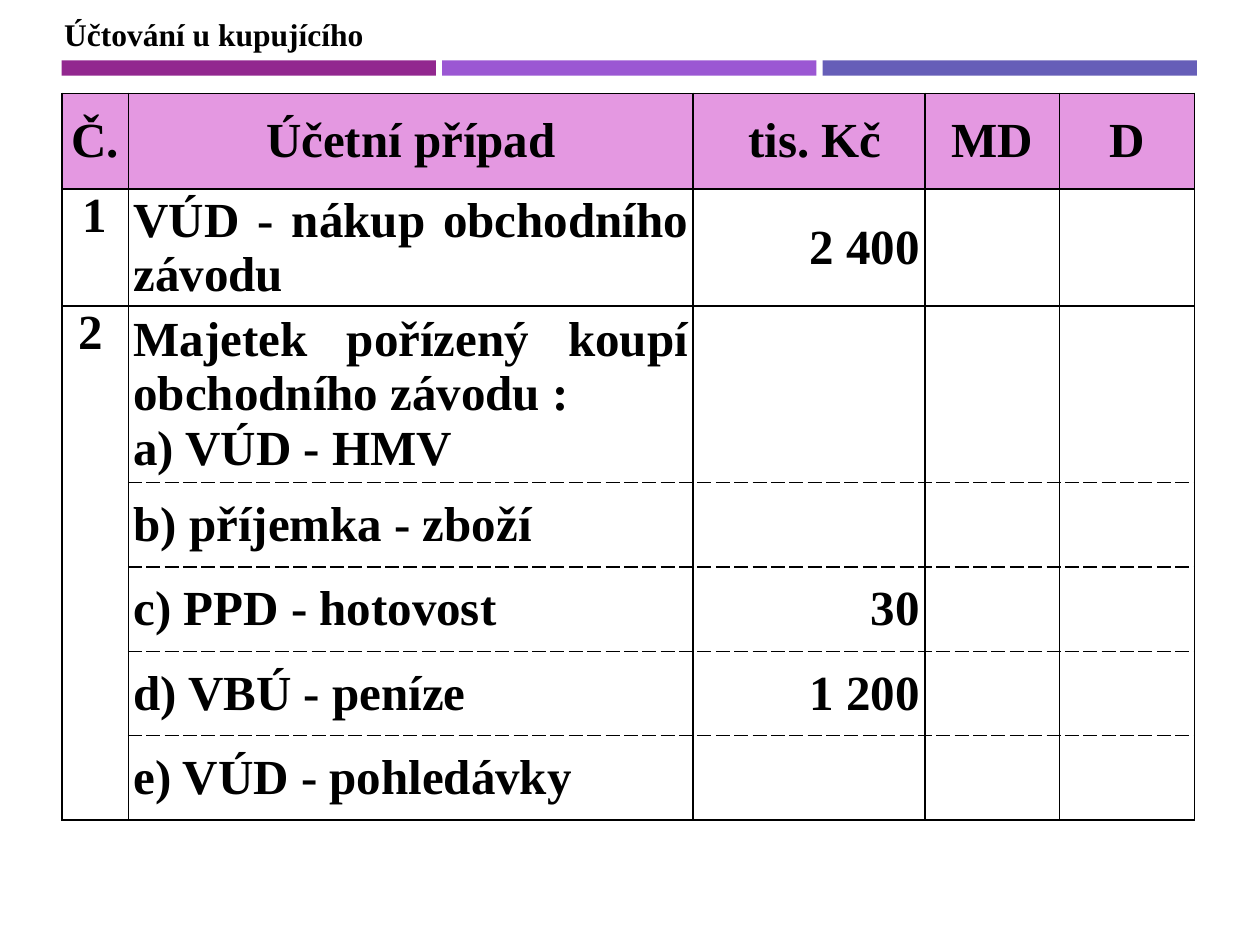
"""Build the slide on the buyer's accounting entries for a purchased business."""
from dataclasses import dataclass

from lxml import etree
from pptx import Presentation
from pptx.dml.color import RGBColor
from pptx.enum.shapes import MSO_SHAPE
from pptx.enum.text import MSO_ANCHOR, MSO_AUTO_SIZE, PP_ALIGN
from pptx.oxml.ns import qn
from pptx.util import Inches, Pt

LEFT, CENTER, RIGHT, JUSTIFY = PP_ALIGN.LEFT, PP_ALIGN.CENTER, PP_ALIGN.RIGHT, PP_ALIGN.JUSTIFY
TOP, MIDDLE = MSO_ANCHOR.TOP, MSO_ANCHOR.MIDDLE
RECTANGLE = MSO_SHAPE.RECTANGLE
NO_AUTOFIT = MSO_AUTO_SIZE.NONE


@dataclass(frozen=True)
class Theme:
    """Colours, font and type sizes of the slide."""
    ink: str = "000000"
    header: str = "E498E1"
    bars: tuple[str, ...] = ("92278F", "9B57D3", "665EB8")
    font: str = "Times New Roman"
    title_size: int = 18
    table_size: int = 28
    rule_width: int = 1


@dataclass(frozen=True)
class Entry:
    """One accounting entry, a row of the table."""
    number: str
    case: str
    amount: str
    height: float


THEME = Theme()
HEADINGS = ("Č.", "Účetní případ", " tis. Kč", "MD", "D")
COLUMN_WIDTHS = (0.53, 4.48, 1.84, 1.07, 1.07)
HEADER_HEIGHT = 0.76
ENTRIES = (
    Entry("1", "VÚD - nákup obchodního závodu", "2 400", 0.93),
    Entry(" 2", "Majetek pořízený koupí obchodního závodu :\na) VÚD - HMV", "", 1.4),
    Entry("", "b) příjemka - zboží", "", 0.67),
    Entry("", "c) PPD - hotovost", "30", 0.67),
    Entry("", "d) VBÚ - peníze", "1 200", 0.67),
    Entry("", "e) VÚD - pohledávky", "", 0.67),
)
GROUP_START, GROUP_END = 2, len(ENTRIES)


def style_text(frame, size: int, align) -> None:
    """Align every paragraph and format its runs."""
    for paragraph in frame.paragraphs:
        paragraph.alignment = align
        for run in paragraph.runs:
            run.font.name = THEME.font
            run.font.size = Pt(size)
            run.font.bold = True
            run.font.color.rgb = RGBColor.from_string(THEME.ink)


def add_title(slide, text: str) -> None:
    """Place the slide title above the bars."""
    title = slide.shapes.title
    title.left, title.top = Inches(0.41), Inches(0.07)
    title.width, title.height = Inches(2.6), Inches(0.4)
    frame = title.text_frame
    frame.text = text
    frame.word_wrap = False
    frame.auto_size = NO_AUTOFIT
    frame.vertical_anchor = TOP
    style_text(frame, THEME.title_size, LEFT)


def add_bars(slide) -> None:
    """Draw the evenly spaced coloured bars."""
    for index, colour in enumerate(THEME.bars):
        bar = slide.shapes.add_shape(
            RECTANGLE, Inches(0.49 + index * 3.02), Inches(0.48), Inches(2.97), Inches(0.12))
        bar.shadow.inherit = False
        bar.fill.solid()
        bar.fill.fore_color.rgb = RGBColor.from_string(colour)
        bar.line.fill.background()


def set_borders(cell, dashed: tuple[str, ...]) -> None:
    """Rule all four sides of a cell, dashing the sides named."""
    properties = cell._tc.get_or_add_tcPr()
    for index, side in enumerate(("lnL", "lnR", "lnT", "lnB")):
        line = etree.Element(qn(f"a:{side}"), w=str(Pt(THEME.rule_width)))
        fill = etree.SubElement(line, qn("a:solidFill"))
        etree.SubElement(fill, qn("a:srgbClr"), val=THEME.ink)
        etree.SubElement(line, qn("a:prstDash"), val="dash" if side in dashed else "solid")
        properties.insert(index, line)


def dashed_sides(row: int, column: int) -> tuple[str, ...]:
    """Return the sides that separate rows within the grouped entry."""
    if column == 0:
        return ()
    top = ("lnT",) if GROUP_START < row <= GROUP_END else ()
    bottom = ("lnB",) if GROUP_START <= row < GROUP_END else ()
    return top + bottom


def fill_cell(cell, text: str, row: int, column: int) -> None:
    """Write and format one table cell."""
    is_header = row == 0
    cell.margin_left = cell.margin_right = Inches(0.04)
    cell.margin_top = cell.margin_bottom = 0
    cell.vertical_anchor = MIDDLE if is_header or column else TOP
    if is_header:
        cell.fill.solid()
        cell.fill.fore_color.rgb = RGBColor.from_string(THEME.header)
    else:
        cell.fill.background()
    set_borders(cell, dashed_sides(row, column))
    if text:
        number_align = LEFT if row == GROUP_START else CENTER
        body_align = (number_align, JUSTIFY, RIGHT, CENTER, CENTER)[column]
        cell.text_frame.text = text
        style_text(cell.text_frame, THEME.table_size, CENTER if is_header else body_align)


def add_entries(slide) -> None:
    """Add the table of accounting entries."""
    heights = (HEADER_HEIGHT, *(entry.height for entry in ENTRIES))
    rows = (HEADINGS, *((entry.number, entry.case, entry.amount, "", "") for entry in ENTRIES))
    table = slide.shapes.add_table(
        len(rows), len(HEADINGS), Inches(0.49), Inches(0.74),
        Inches(sum(COLUMN_WIDTHS)), Inches(sum(heights))).table
    table.first_row = table.horz_banding = False
    for column, width in zip(table.columns, COLUMN_WIDTHS):
        column.width = Inches(width)
    for row, height in zip(table.rows, heights):
        row.height = Inches(height)
    for row, texts in enumerate(rows):
        for column, text in enumerate(texts):
            fill_cell(table.cell(row, column), text, row, column)
    table.cell(GROUP_START, 0).merge(table.cell(GROUP_END, 0))


def main() -> None:
    """Assemble and save the presentation."""
    presentation = Presentation()
    presentation.slide_width, presentation.slide_height = Inches(10), Inches(7.5)
    slide = presentation.slides.add_slide(presentation.slide_layouts.get_by_name("Title Only"))
    add_bars(slide)
    add_title(slide, "Účtování u kupujícího")
    add_entries(slide)
    presentation.save("out.pptx")


if __name__ == "__main__":
    main()
